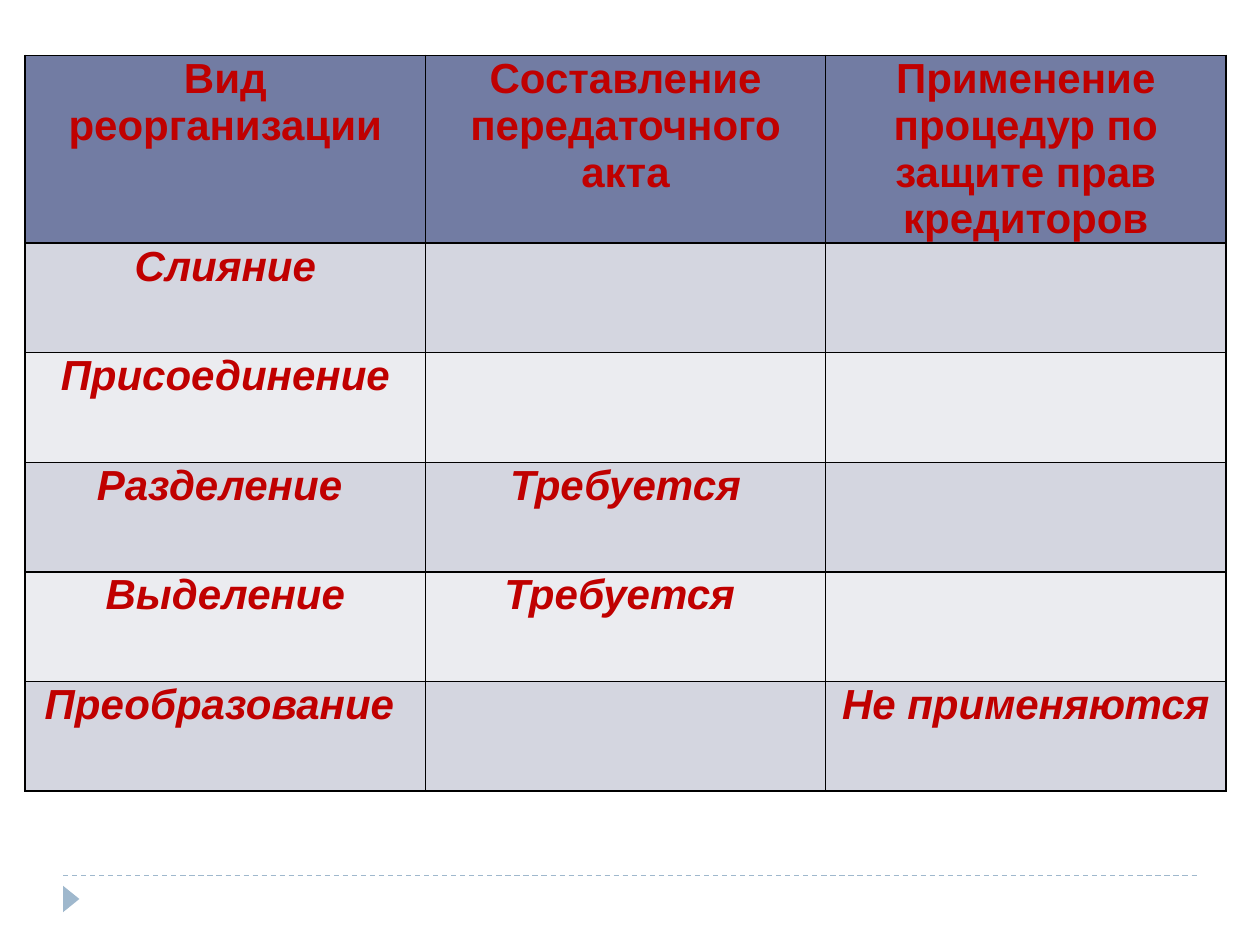
import dataclasses

import lxml.etree
import pptx
import pptx.dml.color
import pptx.enum.dml
import pptx.enum.shapes
import pptx.enum.text
import pptx.oxml.ns
import pptx.util

WIDTH = pptx.util.Inches(10)
HEIGHT = pptx.util.Inches(7.5)
HEADER_FILL = "727CA3"
BAND_FILLS = ("D4D6E0", "EBECF0")
TEXT_COLOR = "C00000"
BORDER_COLOR = "000000"
ACCENT = "9FB8CD"


@dataclasses.dataclass
class Row:
    texts: tuple[str, str, str]
    height: float  # share of the slide height
    fill: str
    italic: bool = True


HEADER = Row(
    ("Вид реорганизации", "Составление передаточного акта",
     "Применение процедур по защите прав кредиторов"),
    1.49 / 7.5, HEADER_FILL, italic=False)
BODY = [
    ("Слияние", "", ""),
    ("Присоединение", "", ""),
    ("Разделение ", "Требуется", ""),
    ("Выделение", "Требуется ", ""),
    ("Преобразование ", "", "Не применяются"),
]


def across(share: float) -> int:
    return round(WIDTH * share)


def down(share: float) -> int:
    return round(HEIGHT * share)


def color(value: str) -> pptx.dml.color.RGBColor:
    return pptx.dml.color.RGBColor.from_string(value)


def write_text(frame, text: str, *, size: float = 24, bold: bool = True,
               italic: bool = False, ink: str = TEXT_COLOR) -> None:
    para = frame.paragraphs[0]
    para.alignment = pptx.enum.text.PP_ALIGN.CENTER
    span = para.add_run()
    span.text = text
    span.font.name = "Arial"
    span.font.size = pptx.util.Pt(size)
    span.font.bold = bold
    span.font.italic = italic
    span.font.color.rgb = color(ink)


def add_borders(cell, ink: str, points: float) -> None:
    properties = cell._tc.get_or_add_tcPr()
    qn = pptx.oxml.ns.qn
    for side in ("lnL", "lnR", "lnT", "lnB"):
        line = lxml.etree.SubElement(
            properties, qn(f"a:{side}"), w=str(pptx.util.Pt(points)))
        fill = lxml.etree.SubElement(line, qn("a:solidFill"))
        lxml.etree.SubElement(fill, qn("a:srgbClr"), val=ink)


def draw_table(page, rows: list[Row], left: float, top: float, width: float) -> None:
    columns = len(rows[0].texts)
    frame = page.shapes.add_table(
        len(rows), columns, across(left), down(top), across(width),
        down(sum(row.height for row in rows)))
    table = frame.table
    for column in table.columns:
        column.width = across(width / columns)
    for index, row in enumerate(rows):
        table.rows[index].height = down(row.height)
        for cell, text in zip(table.rows[index].cells, row.texts):
            cell.margin_left = cell.margin_right = 0
            cell.margin_top = cell.margin_bottom = 0
            # Borders come before the fill in the cell properties
            add_borders(cell, BORDER_COLOR, 1)
            cell.fill.solid()
            cell.fill.fore_color.rgb = color(row.fill)
            if text:
                write_text(cell.text_frame, text, italic=row.italic)


def draw_footer(page) -> None:
    # Dashed rule
    rule = page.shapes.add_connector(
        pptx.enum.shapes.MSO_CONNECTOR.STRAIGHT,
        across(0.05), down(6.95 / 7.5), across(0.95), down(6.95 / 7.5))
    rule.line.color.rgb = color(ACCENT)
    rule.line.width = pptx.util.Pt(0.75)
    rule.line.dash_style = pptx.enum.dml.MSO_LINE.DASH
    lxml.etree.SubElement(rule._element.spPr, pptx.oxml.ns.qn("a:effectLst"))

    # Triangle pointing right
    marker = page.shapes.add_shape(
        pptx.enum.shapes.MSO_SHAPE.ISOSCELES_TRIANGLE,
        across(0.046), down(7.07 / 7.5), across(0.021), down(0.13 / 7.5))
    marker.rotation = 90
    marker.shadow.inherit = False
    marker.fill.solid()
    marker.fill.fore_color.rgb = color(ACCENT)
    marker.line.fill.background()


def main() -> None:
    deck = pptx.Presentation()
    deck.slide_width, deck.slide_height = WIDTH, HEIGHT
    page = deck.slides.add_slide(deck.slide_layouts[6])
    rows = [HEADER] + [
        Row(texts, 0.87 / 7.5, BAND_FILLS[index % 2])
        for index, texts in enumerate(BODY)]
    draw_footer(page)
    draw_table(page, rows, left=0.02, top=0.44 / 7.5, width=0.953)
    deck.save("out.pptx")


if __name__ == "__main__":
    main()
